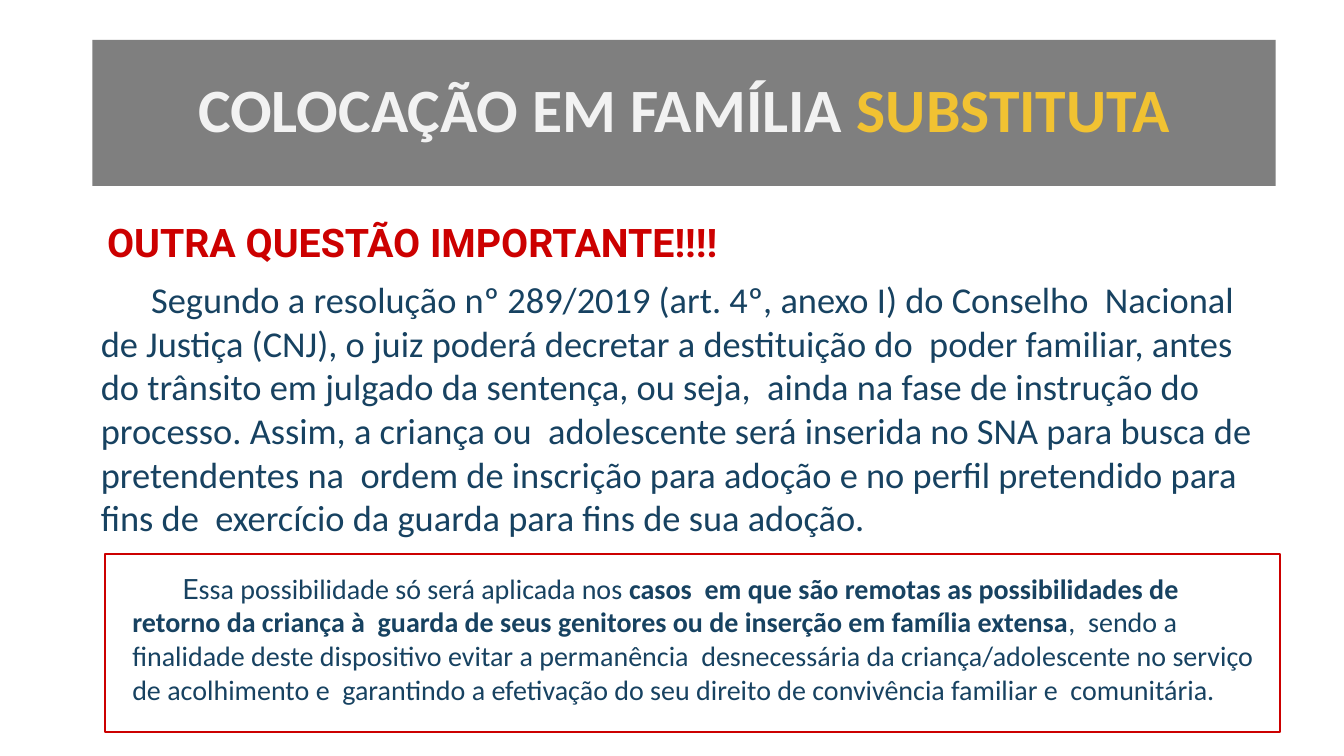
from pptx import Presentation
from pptx.dml.color import RGBColor
from pptx.enum.shapes import MSO_SHAPE
from pptx.enum.text import MSO_ANCHOR, PP_ALIGN
from pptx.util import Emu, Pt

PX = 9525  # EMU per px, 96 px to the inch
COLORS = {"gray": "7F7F7F", "white": "F2F2F2", "yellow": "F1C232",
          "red": "CC0000", "navy": "174261"}

# Each run: text, font, size, color, bold
TITLE = [("COLOCAÇÃO EM FAMÍLIA ", "Calibri", 44, "white", True),
         ("SUBSTITUTA", "Calibri", 44, "yellow", True)]
HEADING = [("OUTRA QUESTÃO IMPORTANTE!!!!", "Roboto", 28.1, "red", True)]
RESOLUTION = [(
    "Segundo a resolução nº 289/2019 (art. 4º, anexo I) do Conselho  Nacional "
    "de Justiça (CNJ), o juiz poderá decretar a destituição do  poder familiar, "
    "antes do trânsito em julgado da sentença, ou seja,  ainda na fase de "
    "instrução do processo. Assim, a criança ou  adolescente será inserida no "
    "SNA para busca de pretendentes na  ordem de inscrição para adoção e no "
    "perfil pretendido para fins de  exercício da guarda para fins de sua adoção.",
    "Calibri", 26, "navy", False)]
CONDITION = [
    ("E", "Roboto", 20, "navy", False),
    ("ssa possibilidade só será aplicada nos ", "Calibri", 20, "navy", False),
    ("casos  em que são remotas as possibilidades de retorno da criança à  "
     "guarda de seus genitores ou de inserção em família extensa",
     "Calibri", 20, "navy", True),
    (",  sendo a finalidade deste dispositivo evitar a permanência  "
     "desnecessária da criança/adolescente no serviço de acolhimento e  "
     "garantindo a efetivação do seu direito de convivência familiar e  "
     "comunitária.", "Calibri", 20, "navy", False)]

# Boxes: left, top, width, height in px
TITLE_BAR = (88, 38, 1127, 139)
HEADING_BOX = (92, 198, 656, 65)
RESOLUTION_BOX = (86, 259, 1127, 262)
CONDITION_FRAME = (100, 528, 1119, 169)
CONDITION_BOX = (116, 534, 1090, 149)
FIRST_LINE_INDENT = 48


def color(name):
    return RGBColor.from_string(COLORS[name])


def emu(box):
    return [Emu(length * PX) for length in box]


def add_rectangle(slide, box):
    rectangle = slide.shapes.add_shape(MSO_SHAPE.RECTANGLE, *emu(box))
    rectangle.shadow.inherit = False
    return rectangle


def write(shape, runs, inset, indent=0):
    """Fill the shape with one left-aligned paragraph and return it."""
    frame = shape.text_frame
    frame.word_wrap = True
    frame.margin_left = frame.margin_right = Emu(10 * PX)
    frame.margin_top = frame.margin_bottom = Emu(inset * PX)
    paragraph = frame.paragraphs[0]
    paragraph.alignment = PP_ALIGN.LEFT
    if indent:
        properties = paragraph._p.get_or_add_pPr()
        properties.set("marL", "0")
        properties.set("indent", str(indent * PX))
    for text, font, size, color_name, bold in runs:
        run = paragraph.add_run()
        run.text = text
        run.font.name = font
        run.font.size = Pt(size)
        run.font.bold = bold
        run.font.color.rgb = color(color_name)
    return paragraph


def main():
    prs = Presentation()
    prs.slide_width, prs.slide_height = emu((1280, 720))
    slide = prs.slides.add_slide(prs.slide_layouts[6])

    resolution = slide.shapes.add_textbox(*emu(RESOLUTION_BOX))
    paragraph = write(resolution, RESOLUTION, 5, FIRST_LINE_INDENT)
    paragraph.space_before = Pt(11)

    title = add_rectangle(slide, TITLE_BAR)
    title.fill.solid()
    title.fill.fore_color.rgb = color("gray")
    title.line.fill.background()
    title.text_frame.vertical_anchor = MSO_ANCHOR.MIDDLE
    paragraph = write(title, TITLE, 5)
    paragraph.alignment = PP_ALIGN.CENTER
    paragraph.line_spacing = 0.9

    write(slide.shapes.add_textbox(*emu(HEADING_BOX)), HEADING, 10)

    frame = add_rectangle(slide, CONDITION_FRAME)
    frame.fill.background()
    frame.line.color.rgb = color("red")
    frame.line.width = Pt(1.5)
    condition = slide.shapes.add_textbox(*emu(CONDITION_BOX))
    write(condition, CONDITION, 10, FIRST_LINE_INDENT)

    prs.save("out.pptx")


if __name__ == "__main__":
    main()
